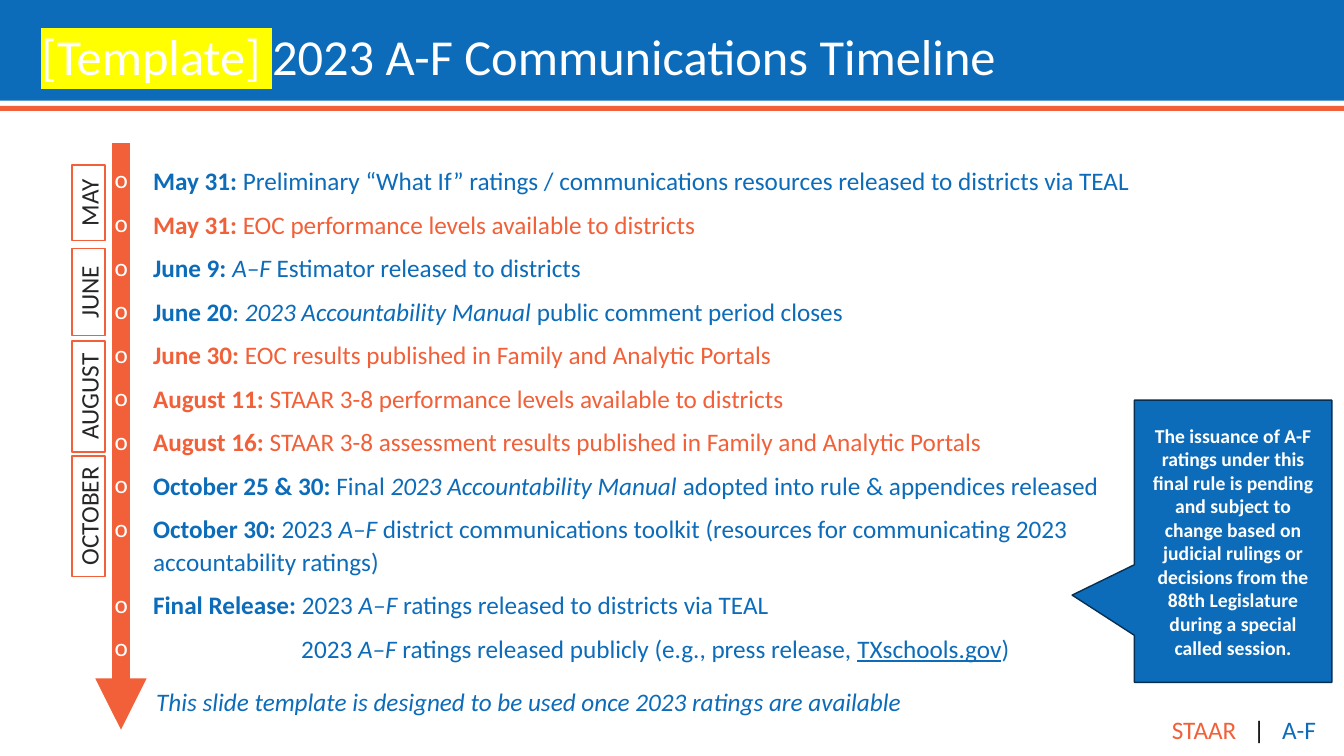
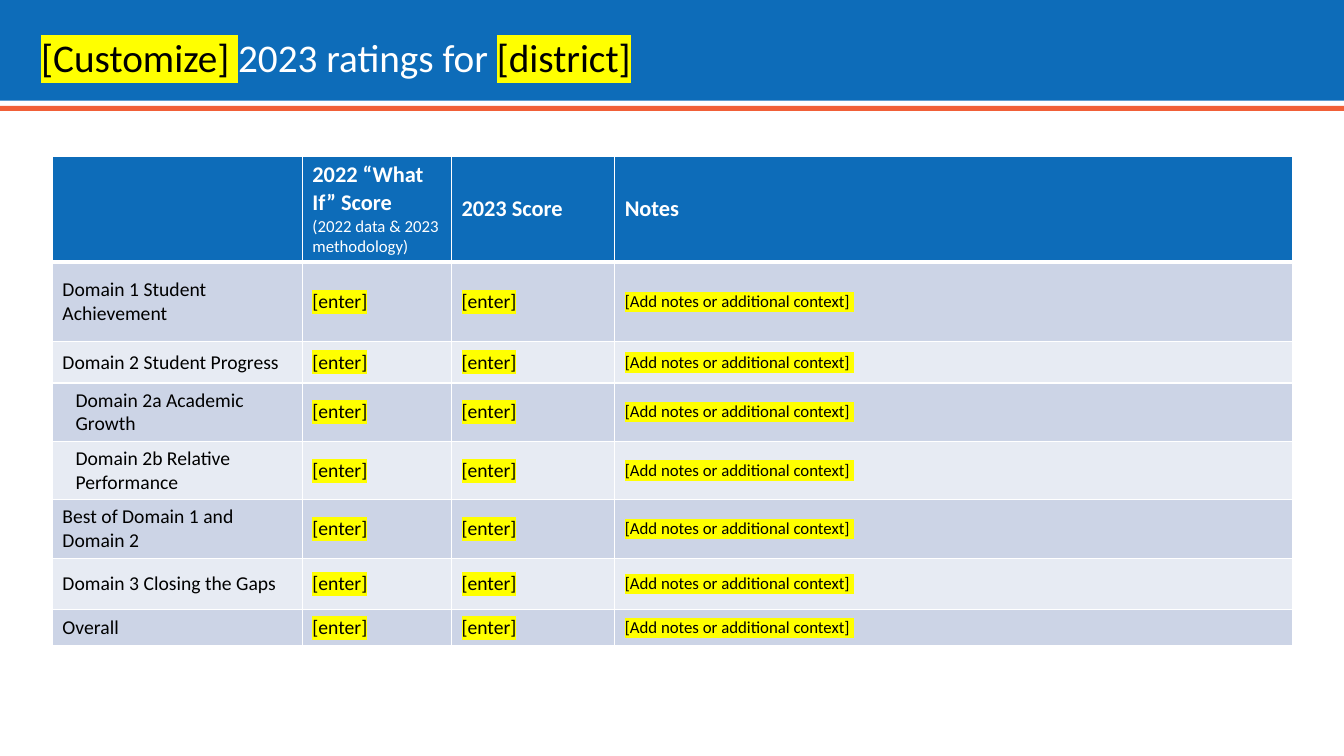
from dataclasses import dataclass

from lxml import etree
from pptx import Presentation
from pptx.dml.color import RGBColor
from pptx.enum.shapes import MSO_CONNECTOR, MSO_SHAPE
from pptx.enum.text import MSO_ANCHOR, PP_ALIGN
from pptx.oxml.ns import qn
from pptx.util import Inches, Pt

RECTANGLE = MSO_SHAPE.RECTANGLE
CALLOUT = MSO_SHAPE.RECTANGULAR_CALLOUT
STRAIGHT = MSO_CONNECTOR.STRAIGHT
TOP, MIDDLE = MSO_ANCHOR.TOP, MSO_ANCHOR.MIDDLE
LEFT, CENTER, RIGHT = PP_ALIGN.LEFT, PP_ALIGN.CENTER, PP_ALIGN.RIGHT

FONT = "Calibri"
COLORS = {
    "blue": "0D6CB9",
    "navy": "062F51",
    "orange": "F16038",
    "white": "FFFFFF",
    "black": "000000",
    "charcoal": "262626",
    "yellow": "FFFF00",
    "row_dark": "CCD4E6",
    "row_light": "E7EBF3",
}

# Each run is (text, flags) with b bold, i italic, u underlined, h highlighted
EVENTS = [
    ("blue", [("May 31:", "b"), (" Preliminary “What If” ratings / communications resources "
                                 "released to districts via TEAL", "")]),
    ("orange", [("May 31:", "b"), (" EOC performance levels available to districts", "")]),
    ("blue", [("June 9: ", "b"), ("A–F ", "i"), ("Estimator released to districts", "")]),
    ("blue", [("June 20", "b"), (": ", ""), ("2023 Accountability Manual", "i"),
              (" public comment period closes", "")]),
    ("orange", [("June 30:", "b"),
                (" EOC results published in Family and Analytic Portals", "")]),
    ("orange", [("August 11:", "b"),
                (" STAAR 3-8 performance levels available to districts", "")]),
    ("orange", [("August 16:", "b"),
                (" STAAR 3-8 assessment results published in Family and Analytic Portals", "")]),
    ("blue", [("October 25 & 30:", "b"), (" Final ", ""), ("2023 Accountability Manual", "i"),
              (" adopted into rule & appendices released", "")]),
    ("blue", [("October 30:", "b"), (" 2023 ", ""), ("A–F", "i"),
              (" district communications toolkit (resources for communicating 2023 "
               "accountability ratings)", "")]),
    ("blue", [("Final Release:", "b"), (" 2023 ", ""), ("A–F", "i"),
              (" ratings released to districts via TEAL", "")]),
    ("blue", [("2023 ", ""), ("A–F", "i"),
              (" ratings released publicly (e.g., press release, ", ""),
              ("TXschools.gov", "u"), (")", "")]),
]
EVENT_INDENT, FINAL_INDENT = 0.38, 1.85

# Month, middle and length along the timeline, in percent
MONTHS = [("MAY", 10.2, 12.9), ("JUNE", 25.4, 14.8),
          ("AUGUST", 43.2, 18.9), ("OCTOBER", 63.6, 20.6)]

COLUMN_SHARES = [20.15, 12.02, 13.16, 54.67]
HEADER_SHARE = 21.6
# Row label, share of the table height, label indent in inches
RATING_ROWS = [
    ("Domain 1 Student Achievement", 16.26, 0),
    ("Domain 2 Student Progress", 8.44, 0),
    ("Domain 2a Academic Growth", 11.93, 0.13),
    ("Domain 2b Relative Performance", 11.93, 0.13),
    ("Best of Domain 1 and Domain 2", 11.93, 0),
    ("Domain 3 Closing the Gaps", 10.49, 0),
    ("Overall", 7.42, 0),
]


@dataclass
class Box:
    left: int
    top: int
    width: int
    height: int

    def inner(self, left, top, width, height):
        """Return an inner box given in percent of this one."""
        return Box(self.left + int(self.width * left / 100),
                   self.top + int(self.height * top / 100),
                   int(self.width * width / 100),
                   int(self.height * height / 100))

    def bounds(self):
        return self.left, self.top, self.width, self.height


PAGE = Box(0, 0, Inches(13.33), Inches(7.5))


def rgb(color):
    return RGBColor.from_string(COLORS[color])


def add_color_fill(parent, color):
    fill = etree.SubElement(parent, qn("a:solidFill"))
    etree.SubElement(fill, qn("a:srgbClr"), val=COLORS[color])


def write_runs(paragraph, runs, size, color):
    for text, flags in runs:
        run = paragraph.add_run()
        run.text = text
        font = run.font
        font.size, font.name = Pt(size), FONT
        font.bold, font.italic, font.underline = (flag in flags for flag in "biu")
        font.color.rgb = rgb(color)
        if "h" in flags:
            properties = run._r.get_or_add_rPr()
            highlight = etree.Element(qn("a:highlight"))
            etree.SubElement(highlight, qn("a:srgbClr"), val=COLORS["yellow"])
            properties.find(qn("a:solidFill")).addnext(highlight)


def add_text_box(slide, box, anchor=TOP, align=LEFT):
    frame = slide.shapes.add_textbox(*box.bounds()).text_frame
    frame.word_wrap = True
    frame.vertical_anchor = anchor
    frame.paragraphs[0].alignment = align
    return frame


def add_panel(slide, box, fill, line=None, kind=RECTANGLE):
    shape = slide.shapes.add_shape(kind, *box.bounds())
    shape.shadow.inherit = False
    shape.fill.solid()
    shape.fill.fore_color.rgb = rgb(fill)
    if line:
        shape.line.color.rgb = rgb(line)
        shape.line.width = Pt(1)
    else:
        shape.line.fill.background()
    shape.text_frame.vertical_anchor = MIDDLE
    shape.text_frame.paragraphs[0].alignment = CENTER
    return shape


def add_titled_slide(presentation, size, title_runs):
    slide = presentation.slides.add_slide(presentation.slide_layouts[6])
    # Bands
    add_panel(slide, PAGE.inner(0, 0, 100, 13.33), "blue")
    add_panel(slide, PAGE.inner(0, 14, 100, 0.67), "orange")
    # Title
    frame = add_text_box(slide, PAGE.inner(2.33, 2.4, 84.1, 10.93), MIDDLE)
    paragraph = frame.paragraphs[0]
    paragraph.line_spacing = 0.9
    for text, flags, color in title_runs:
        write_runs(paragraph, [(text, flags)], size, color)
    return slide


def add_bullet(paragraph, indent):
    properties = paragraph._p.get_or_add_pPr()
    properties.set("marL", str(Inches(indent)))
    properties.set("indent", str(-Inches(indent)))
    bullet_color = etree.SubElement(properties, qn("a:buClr"))
    etree.SubElement(bullet_color, qn("a:srgbClr"), val=COLORS["white"])
    etree.SubElement(properties, qn("a:buFont"), typeface=FONT)
    etree.SubElement(properties, qn("a:buChar"), char="o")


def add_timeline(slide, box):
    # Arrow
    axis = box.inner(4.92, 0, 0, 100)
    arrow = slide.shapes.add_connector(STRAIGHT, axis.left, axis.top,
                                       axis.left, axis.top + axis.height)
    arrow.line.color.rgb = rgb("orange")
    arrow.line.width = Pt(12.25)
    outline = arrow._element.spPr.find(qn("a:ln"))
    etree.SubElement(outline, qn("a:tailEnd"), type="triangle")
    etree.SubElement(arrow._element.spPr, qn("a:effectLst"))

    # Events
    frame = add_text_box(slide, box.inner(3.44, 2.58, 96.56, 87.63))
    for index, (color, runs) in enumerate(EVENTS):
        paragraph = frame.add_paragraph() if index else frame.paragraphs[0]
        is_last = index == len(EVENTS) - 1
        add_bullet(paragraph, FINAL_INDENT if is_last else EVENT_INDENT)
        paragraph.line_spacing = 1.07
        paragraph.space_after = Pt(8)
        write_runs(paragraph, runs, 18, color)

    # Month labels, turned to read upwards
    for month, middle, length in MONTHS:
        upright = box.inner(0.44, middle - length / 2, 3.04, length)
        shift = (upright.height - upright.width) // 2
        flat = Box(upright.left - shift, upright.top + shift, upright.height, upright.width)
        label = add_panel(slide, flat, "white", "orange")
        label.rotation = 270
        label.text_frame.word_wrap = False
        write_runs(label.text_frame.paragraphs[0], [(month, "")], 18, "charcoal")


def add_ruling_callout(slide, box):
    callout = add_panel(slide, box, "blue", "navy", CALLOUT)
    callout.adjustments[0] = -0.815
    callout.adjustments[1] = 0.191
    callout.text_frame.word_wrap = True
    message = ("The issuance of A-F ratings under this final rule is pending and subject to "
               "change based on judicial rulings or decisions from the 88th Legislature "
               "during a special called session.")
    write_runs(callout.text_frame.paragraphs[0], [(message, "b")], 14, "white")


def add_timeline_slide(presentation):
    slide = add_titled_slide(presentation, 36, [
        ("[Template] ", "h", "white"), ("2023 A-F Communications Timeline", "", "white")])
    add_timeline(slide, PAGE.inner(5, 18.93, 81.4, 77.6))
    # Color key
    key = add_text_box(slide, PAGE.inner(71.04, 93.87, 27.61, 5.33), align=RIGHT)
    for text, color in [("STAAR", "orange"), ("   |   ", "black"), ("A-F", "blue")]:
        write_runs(key.paragraphs[0], [(text, "")], 18, color)
    add_ruling_callout(slide, PAGE.inner(84.4, 52.93, 14.7, 37.33))
    # Usage note
    note = add_text_box(slide, PAGE.inner(10.88, 90.13, 64.97, 5.33))
    usage = "This slide template is designed to be used once 2023 ratings are available"
    write_runs(note.paragraphs[0], [(usage, "i")], 18, "blue")


def style_cell(cell, fill, bottom=1):
    properties = cell._tc.get_or_add_tcPr()
    for side, width in [("L", 1), ("R", 1), ("T", 1), ("B", bottom)]:
        border = etree.SubElement(properties, qn(f"a:ln{side}"), w=str(Pt(width)))
        add_color_fill(border, "white")
    cell.fill.solid()
    cell.fill.fore_color.rgb = rgb(fill)
    cell.vertical_anchor = MIDDLE


def add_ratings_table(slide, box):
    table = slide.shapes.add_table(len(RATING_ROWS) + 1, len(COLUMN_SHARES),
                                   *box.bounds()).table
    for column, share in zip(table.columns, COLUMN_SHARES):
        column.width = int(box.width * share / 100)
    row_shares = [HEADER_SHARE] + [share for _, share, _ in RATING_ROWS]
    for row, share in zip(table.rows, row_shares):
        row.height = int(box.height * share / 100)

    # Header
    for index, heading in enumerate(["", "2022 “What If” Score", "2023 Score", "Notes"]):
        cell = table.cell(0, index)
        style_cell(cell, "blue", bottom=3)
        if heading:
            write_runs(cell.text_frame.paragraphs[0], [(heading, "b")], 16, "white")
    method = table.cell(0, 1).text_frame.add_paragraph()
    write_runs(method, [("(2022 data & 2023 methodology)", "")], 12, "white")

    # Ratings
    for row_index, (label, _, indent) in enumerate(RATING_ROWS, start=1):
        entries = [(label, "", 14), ("[enter]", "h", 14), ("[enter]", "h", 14),
                   ("[Add notes or additional context] ", "h", 12)]
        for column_index, (text, flags, size) in enumerate(entries):
            cell = table.cell(row_index, column_index)
            style_cell(cell, "row_dark" if row_index % 2 else "row_light")
            write_runs(cell.text_frame.paragraphs[0], [(text, flags)], size, "black")
        if indent:
            label_paragraph = table.cell(row_index, 0).text_frame.paragraphs[0]
            label_paragraph._p.get_or_add_pPr().set("marL", str(Inches(indent)))


def add_ratings_slide(presentation):
    slide = add_titled_slide(presentation, 28, [
        ("[Customize] ", "h", "black"), ("2023 ratings for ", "", "white"),
        ("[district]", "h", "black")])
    add_ratings_table(slide, PAGE.inner(3.9, 20.67, 92.3, 64.8))


def main():
    presentation = Presentation()
    presentation.slide_width = PAGE.width
    presentation.slide_height = PAGE.height
    add_timeline_slide(presentation)
    add_ratings_slide(presentation)
    presentation.save("out.pptx")


if __name__ == "__main__":
    main()
